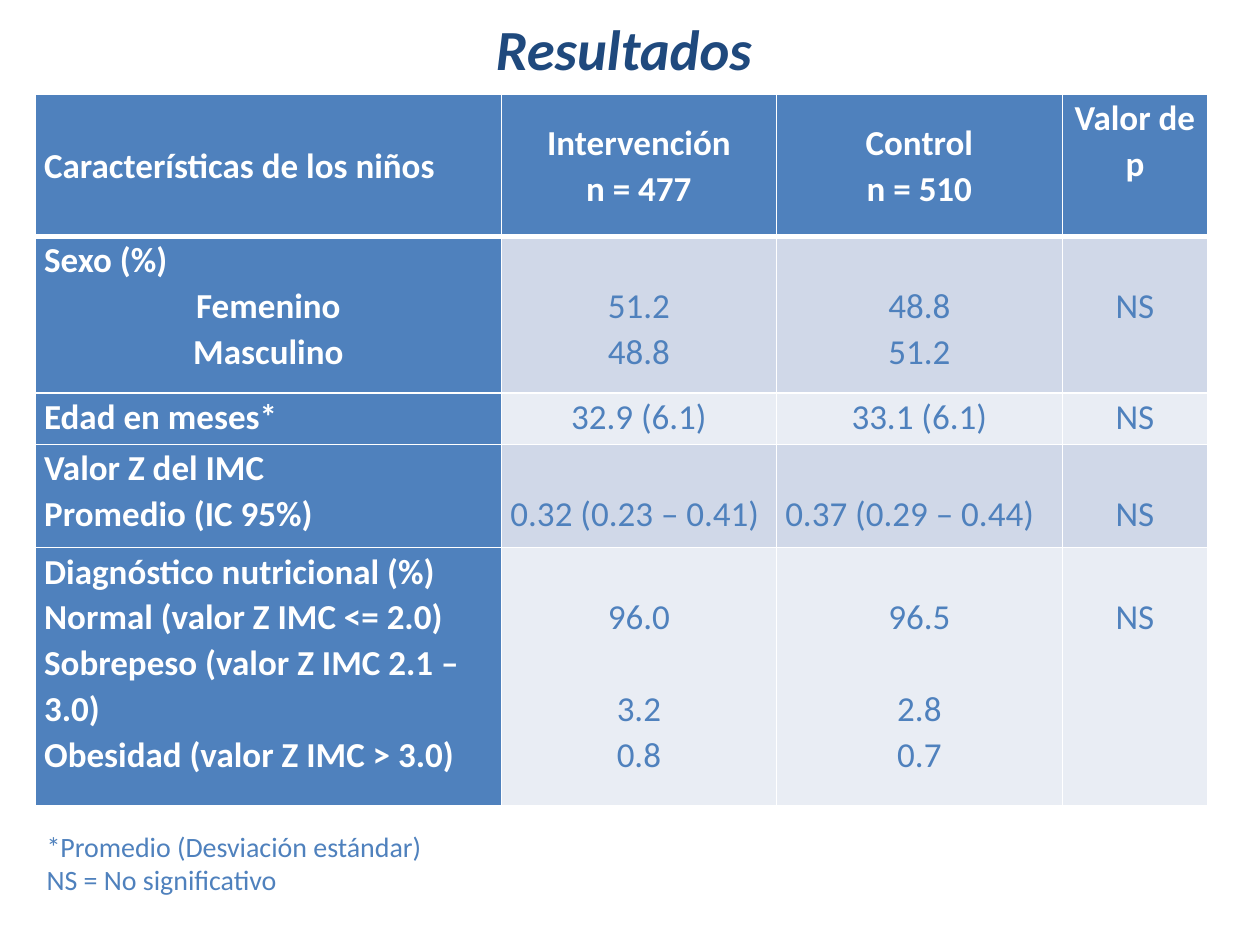
from lxml.etree import SubElement
from pptx import Presentation
from pptx.dml.color import RGBColor
from pptx.enum.text import MSO_ANCHOR, MSO_AUTO_SIZE, PP_ALIGN
from pptx.oxml.ns import qn
from pptx.util import Cm, Pt

LEFT, CENTER = PP_ALIGN.LEFT, PP_ALIGN.CENTER


def color(hex_string):
    return RGBColor.from_string(hex_string)


def write(frame, lines, size, ink, font="Calibri", bold=False, italic=False,
          aligns=(LEFT,), spacing=None, line_height=0):
    """Write one paragraph per line; None leaves a gap of one line height.

    The last alignment holds for all further lines."""
    gap, count = 0, 0
    for line in lines:
        if line is None:
            gap += line_height
            continue
        paragraph = frame.add_paragraph() if count else frame.paragraphs[0]
        paragraph.alignment = aligns[min(count, len(aligns) - 1)]
        if spacing:
            paragraph.line_spacing = spacing
        if gap and count:
            paragraph.space_before = Pt(gap)
        elif gap:
            frame.margin_top = Pt(gap)
        run = paragraph.add_run()
        run.text = line
        run.font.name, run.font.size = font, Pt(size)
        run.font.bold, run.font.italic = bold, italic
        run.font.color.rgb = color(ink)
        gap, count = 0, count + 1


class ResultsSlide:
    BLUE, NAVY, WHITE = "4F81BD", "1F497D", "FFFFFF"
    BANDS = ("D0D8E8", "E9EDF4")
    LINE_HEIGHT = 26.1

    def __init__(self, presentation):
        self.slide = presentation.slides.add_slide(presentation.slide_layouts[5])

    def title(self, text, left, top, width, height):
        title = self.slide.shapes.title
        title.left, title.top = Cm(left), Cm(top)
        title.width, title.height = Cm(width), Cm(height)
        frame = title.text_frame
        frame.vertical_anchor = MSO_ANCHOR.MIDDLE
        frame.margin_right = Cm(0.76)  # sets the heading slightly left of centre
        write(frame, [text], 32.4, self.NAVY, bold=True, italic=True, aligns=(CENTER,))

    def table(self, rows, left, top, widths, heights):
        table = self.slide.shapes.add_table(
            len(rows), len(widths), Cm(left), Cm(top),
            Cm(sum(widths)), Cm(sum(heights))).table
        for column, width in zip(table.columns, widths):
            column.width = Cm(width)
        for row, height in zip(table.rows, heights):
            row.height = Cm(height)
        for r, row in enumerate(rows):
            for c, (lines, aligns, anchor) in enumerate(row):
                self.cell(table.cell(r, c), lines, aligns, anchor, r, c)

    def cell(self, cell, lines, aligns, anchor, r, c):
        heading = r == 0 or c == 0
        cell.vertical_anchor = anchor
        # Bottom rule of the header is thicker, on both sides of the edge
        for side in ("L", "R", "T", "B"):
            thick = (r, side) in ((0, "B"), (1, "T"))
            line = SubElement(cell._tc.get_or_add_tcPr(), qn(f"a:ln{side}"),
                              w=str(Pt(3 if thick else 1)))
            fill = SubElement(line, qn("a:solidFill"))
            SubElement(fill, qn("a:srgbClr"), val=self.WHITE)
        cell.fill.solid()
        cell.fill.fore_color.rgb = color(self.BLUE if heading else self.BANDS[(r - 1) % 2])
        cell.margin_left = cell.margin_right = Cm(0.18)
        cell.margin_top = cell.margin_bottom = 0
        # Leading gaps become the top margin of the cell
        lead = next(i for i, line in enumerate(lines) if line is not None)
        cell.margin_top = Pt(lead * self.LINE_HEIGHT)
        write(cell.text_frame, lines[lead:], 20, self.WHITE if heading else self.BLUE,
              bold=heading, aligns=aligns, spacing=1.07, line_height=self.LINE_HEIGHT)

    def note(self, lines, left, top, width, height):
        frame = self.slide.shapes.add_textbox(
            Cm(left), Cm(top), Cm(width), Cm(height)).text_frame
        frame.word_wrap = False
        frame.auto_size = MSO_AUTO_SIZE.SHAPE_TO_FIT_TEXT
        write(frame, lines, 16, self.BLUE)


def entry(*lines, aligns=(CENTER,), anchor=MSO_ANCHOR.TOP):
    return lines, aligns, anchor


def label(*lines, **options):
    return entry(*lines, **{"aligns": (LEFT,), **options})


def main():
    presentation = Presentation()
    presentation.slide_width, presentation.slide_height = Cm(25.4), Cm(19.05)
    results = ResultsSlide(presentation)

    results.title("Resultados", 1.4, 0.41, 22.86, 1.12)

    # Comparison of both groups; None is a skipped line
    middle = MSO_ANCHOR.MIDDLE
    groups = [
        [label("Características de los niños", anchor=middle),
         entry("Intervención", "n = 477", anchor=middle),
         entry("Control", "n = 510", anchor=middle),
         entry("Valor de", "p")],
        [label("Sexo (%)", "Femenino", "Masculino", aligns=(LEFT, CENTER)),
         entry(None, "51.2", "48.8"), entry(None, "48.8", "51.2"), entry(None, "NS")],
        [label("Edad en meses*"),
         entry("32.9 (6.1)"), entry("33.1 (6.1)"), entry("NS")],
        [label("Valor Z del IMC", "Promedio (IC 95%)"),
         label(None, "0.32 (0.23 – 0.41)"), label(None, "0.37 (0.29 – 0.44)"),
         entry(None, "NS")],
        [label("Diagnóstico nutricional (%)", "Normal (valor Z IMC <= 2.0)",
               "Sobrepeso (valor Z IMC 2.1 – 3.0)", "Obesidad (valor Z IMC > 3.0)"),
         entry(None, "96.0", None, "3.2", "0.8"),
         entry(None, "96.5", None, "2.8", "0.7"), entry(None, "NS")],
    ]
    results.table(groups, 0.71, 1.9, widths=(9.4, 5.54, 5.77, 2.92),
                  heights=(2.87, 3.15, 1.04, 2.08, 5.21))

    # Key to the symbols
    results.note(["*Promedio (Desviación estándar)", "NS = No significativo"],
                 0.69, 16.59, 8.18, 1.63)

    presentation.save("out.pptx")


if __name__ == "__main__":
    main()
